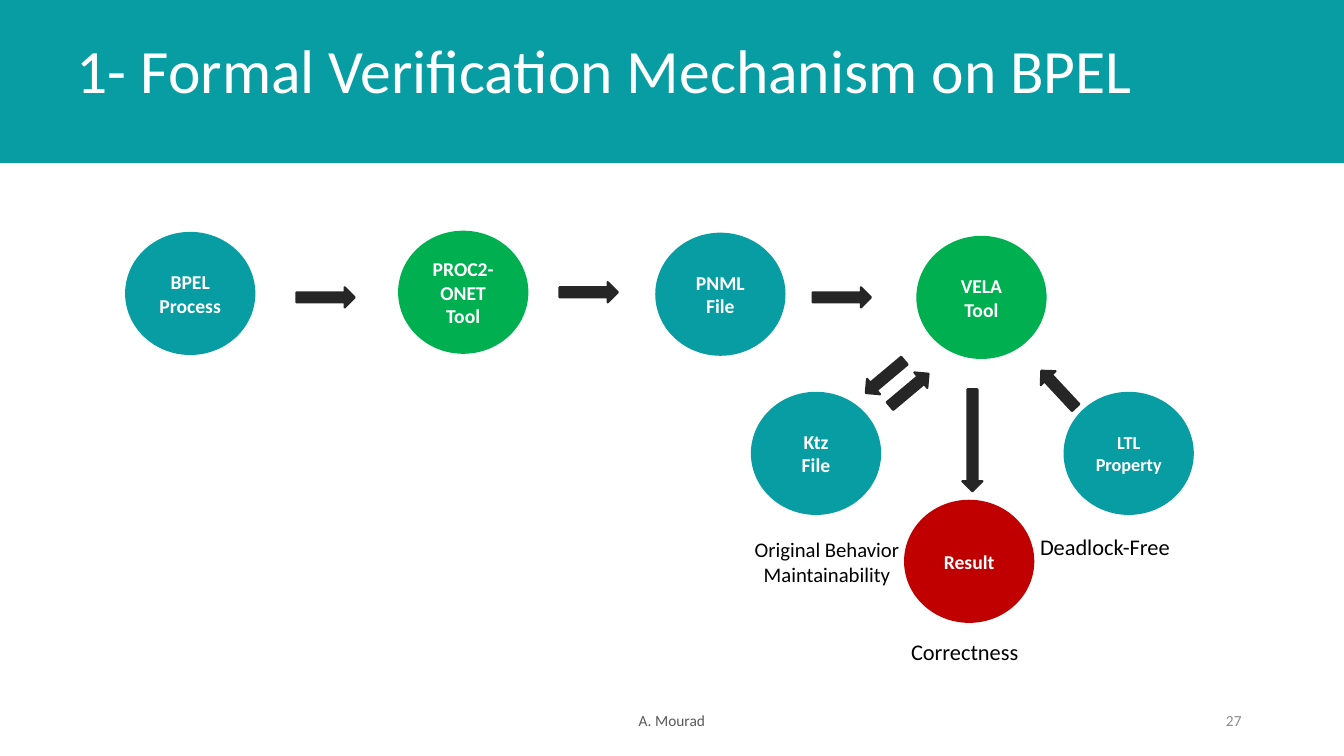
from pptx import Presentation
from pptx.dml.color import RGBColor
from pptx.enum.shapes import MSO_SHAPE
from pptx.enum.text import MSO_ANCHOR, PP_ALIGN
from pptx.util import Cm, Pt

RECTANGLE = MSO_SHAPE.RECTANGLE
OVAL = MSO_SHAPE.OVAL
RIGHT_ARROW = MSO_SHAPE.RIGHT_ARROW
TOP, MIDDLE = MSO_ANCHOR.TOP, MSO_ANCHOR.MIDDLE
LEFT, CENTER, RIGHT = PP_ALIGN.LEFT, PP_ALIGN.CENTER, PP_ALIGN.RIGHT

FONT = "Calibri"
TEAL, GREEN, RED = "089CA3", "00B050", "C00000"
WHITE, BLACK, CHARCOAL = "FFFFFF", "000000", "262626"
LIGHT_GRAY, DARK_GRAY = "8C8C8C", "595959"

SLIDE_WIDTH, SLIDE_HEIGHT = 33.87, 19.05
CIRCLE_WIDTH, CIRCLE_HEIGHT = 3.23, 3.05
ARROW_HEIGHT = 0.51

CIRCLES = [
    (0, 0.03, "BPEL\nProcess", TEAL, 14),
    (6.88, 0, "PROC2-ONET\nTool", GREEN, 14),
    (13.36, 0.05, "PNML\nFile", TEAL, 14),
    (19.94, 0.13, "VELA\nTool", GREEN, 14),
    (15.77, 4.06, "Ktz\nFile", TEAL, 14),
    (23.65, 4.06, "LTL\nProperty", TEAL, 13),
    (19.63, 6.78, "Result", RED, 14),
]
ARROWS = [
    (4.29, 1.4, 1.47, 0),
    (10.92, 1.27, 1.47, 0),
    (17.3, 1.4, 1.47, 0),
    (18.49, 3.4, 1.27, 140),
    (22.86, 3.71, 1.27, 227),
    (19.1, 3.73, 1.27, 320),
    (20.04, 5, 2.57, 90),
]
CAPTIONS = [
    (15.49, 7.57, 4.34, 1.65, "Original Behavior\nMaintainability", 14.8, CENTER),
    (22.78, 7.47, 7.01, 1.6, "Deadlock-Free", 16, LEFT),
    (19.53, 10.11, 3.43, 1.09, "Correctness", 16, LEFT),
]


def color(hex_string):
    return RGBColor.from_string(hex_string)


def write_text(shape, text, size, text_color, alignment, anchor, bold=False):
    frame = shape.text_frame
    frame.word_wrap = True
    frame.vertical_anchor = anchor
    frame.text = text
    for paragraph in frame.paragraphs:
        paragraph.alignment = alignment
        paragraph.font.name = FONT
        paragraph.font.size = Pt(size)
        paragraph.font.bold = bold
        paragraph.font.color.rgb = color(text_color)


def add_solid(slide, kind, left, top, width, height, fill):
    shape = slide.shapes.add_shape(kind, Cm(left), Cm(top), Cm(width), Cm(height))
    shape.shadow.inherit = False
    shape.fill.solid()
    shape.fill.fore_color.rgb = color(fill)
    shape.line.color.rgb = color(fill)
    shape.line.width = Pt(1.5)
    return shape


def add_label(slide, left, top, width, height, text, size, text_color, alignment, anchor=TOP):
    label = slide.shapes.add_textbox(Cm(left), Cm(top), Cm(width), Cm(height))
    write_text(label, text, size, text_color, alignment, anchor)


def add_header(slide, left, top, width, height):
    banner = add_solid(slide, RECTANGLE, left, top, width, height, TEAL)
    title = slide.shapes.title
    title.element.addprevious(banner.element)
    title.left, title.top = Cm(left + 1.68), Cm(top + 0.18)
    title.width, title.height = Cm(width - 4), Cm(height - 0.74)
    write_text(title, "1- Formal Verification Mechanism on BPEL", 44, WHITE, LEFT, MIDDLE)
    title.text_frame.paragraphs[0].line_spacing = 0.9


def add_diagram(slide, left, top):
    for x, y, text, fill, size in CIRCLES:
        circle = add_solid(slide, OVAL, left + x, top + y, CIRCLE_WIDTH, CIRCLE_HEIGHT, fill)
        write_text(circle, text, size, WHITE, CENTER, MIDDLE, bold=True)
    for x, y, length, angle in ARROWS:
        arrow = add_solid(slide, RIGHT_ARROW, left + x, top + y, length, ARROW_HEIGHT, CHARCOAL)
        arrow.rotation = angle
    for x, y, width, height, text, size, alignment in CAPTIONS:
        add_label(slide, left + x, top + y, width, height, text, size, BLACK, alignment)


def add_footer(slide, left, top, width, height):
    number_width, author_width = 7.62, 11.43
    add_label(slide, left + width - number_width, top, number_width, height,
              "27", 11, LIGHT_GRAY, RIGHT, MIDDLE)
    add_label(slide, left + (width - author_width) / 2, top, author_width, height,
              "A. Mourad", 11, DARK_GRAY, CENTER, MIDDLE)


def main():
    presentation = Presentation()
    presentation.slide_width = Cm(SLIDE_WIDTH)
    presentation.slide_height = Cm(SLIDE_HEIGHT)
    slide = presentation.slides.add_slide(presentation.slide_layouts[5])
    add_header(slide, 0, 0, SLIDE_WIDTH, 4.09)
    add_diagram(slide, 3.18, 5.84)
    add_footer(slide, 2.33, 17.65, SLIDE_WIDTH - 4.66, 1.02)
    presentation.save("out.pptx")


if __name__ == "__main__":
    main()
